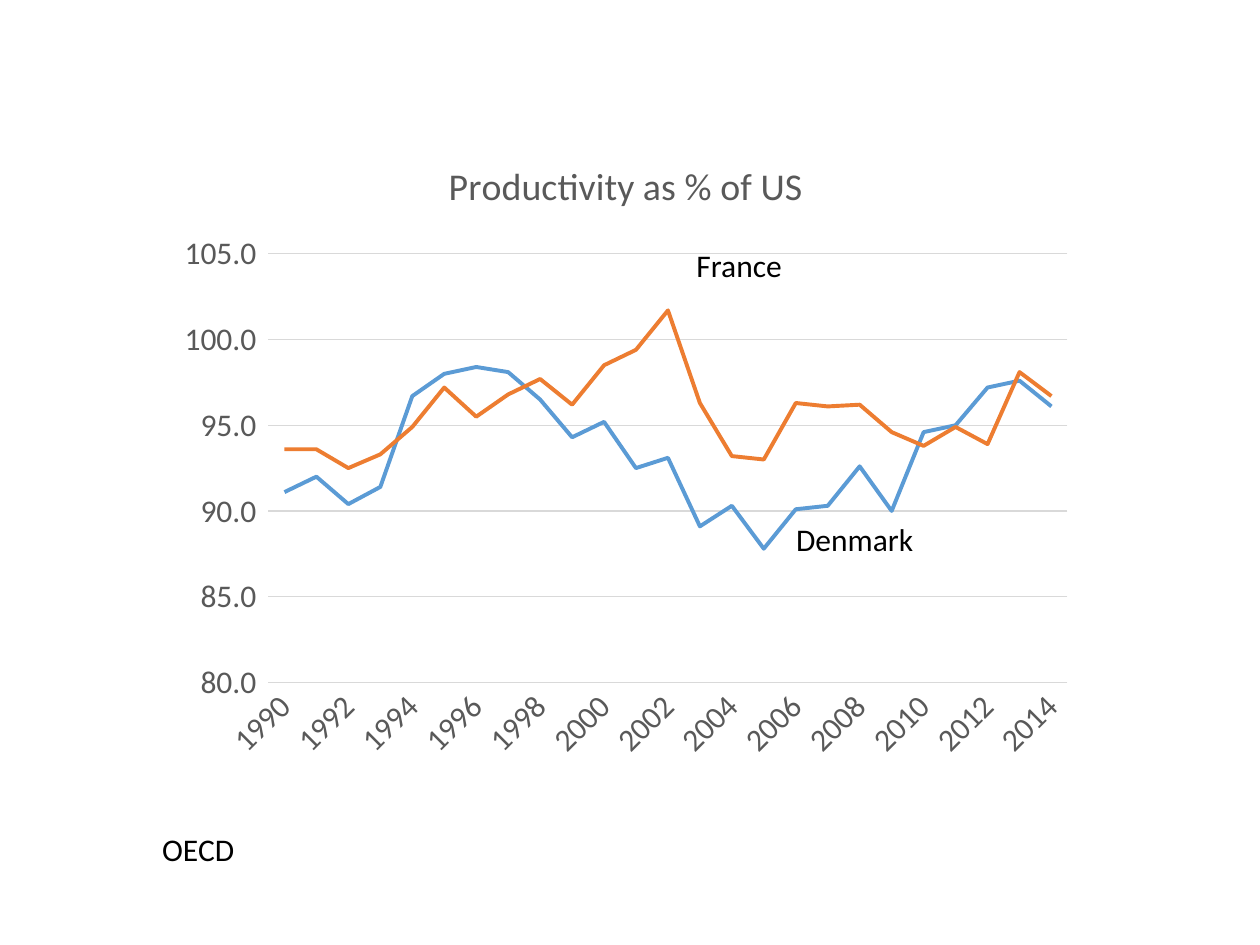
from dataclasses import dataclass

from lxml.etree import SubElement
from pptx import Presentation
from pptx.chart.data import CategoryChartData
from pptx.dml.color import RGBColor
from pptx.enum.chart import XL_CHART_TYPE, XL_TICK_MARK
from pptx.enum.text import MSO_AUTO_SIZE
from pptx.oxml.ns import qn
from pptx.util import Cm, Pt


@dataclass(frozen=True)
class Theme:
    font: str = "Calibri"
    text: RGBColor = RGBColor(0x00, 0x00, 0x00)
    muted: RGBColor = RGBColor(0x59, 0x59, 0x59)
    grid: RGBColor = RGBColor(0xD9, 0xD9, 0xD9)
    series: tuple = (RGBColor(0x5B, 0x9B, 0xD5), RGBColor(0xED, 0x7D, 0x31))
    body_size: Pt = Pt(18)
    title_size: Pt = Pt(21.6)
    grid_width: Pt = Pt(0.75)
    series_width: Pt = Pt(2.25)


YEARS = [str(year) for year in range(1990, 2015)]
PRODUCTIVITY = {
    "Denmark": (91.1, 92.0, 90.4, 91.4, 96.7, 98.0, 98.4, 98.1, 96.5, 94.3,
                95.2, 92.5, 93.1, 89.1, 90.3, 87.8, 90.1, 90.3, 92.6, 90.0,
                94.6, 95.0, 97.2, 97.6, 96.1),
    "France": (93.6, 93.6, 92.5, 93.3, 94.9, 97.2, 95.5, 96.8, 97.7, 96.2,
               98.5, 99.4, 101.7, 96.3, 93.2, 93.0, 96.3, 96.1, 96.2, 94.6,
               93.8, 94.9, 93.9, 98.1, 96.7),
}


class SlideBuilder:
    def __init__(self, page, theme):
        self.page = page
        self.theme = theme

    def style_font(self, font, color, size=None):
        font.name = self.theme.font
        font.size = size or self.theme.body_size
        font.bold = False
        font.color.rgb = color

    def style_line(self, line, color, width):
        line.color.rgb = color
        line.width = width

    def label(self, text, left, top, width, height=1.03):
        box = self.page.shapes.add_textbox(Cm(left), Cm(top), Cm(width), Cm(height))
        frame = box.text_frame
        frame.word_wrap = False
        frame.auto_size = MSO_AUTO_SIZE.SHAPE_TO_FIT_TEXT
        para = frame.paragraphs[0]
        para.text = text
        self.style_font(para.font, self.theme.text)

    def line_chart(self, title, categories, series, left, top, width, height):
        data = CategoryChartData(number_format="0.0")
        data.categories = categories
        for name, values in series.items():
            data.add_series(name, values)
        chart = self.page.shapes.add_chart(
            XL_CHART_TYPE.LINE, Cm(left), Cm(top), Cm(width), Cm(height), data
        ).chart
        chart.has_legend = False
        self.style_font(chart.font, self.theme.text)
        chart.has_title = True
        chart.chart_title.include_in_layout = False
        para = chart.chart_title.text_frame.paragraphs[0]
        para.text = title
        self.style_font(para.font, self.theme.muted, self.theme.title_size)
        for line, color in zip(chart.plots[0].series, self.theme.series):
            line.smooth = False
            self.style_line(line.format.line, color, self.theme.series_width)
        self.category_axis(chart.category_axis)
        self.value_axis(chart.value_axis)

    def axis(self, axis):
        axis.major_tick_mark = axis.minor_tick_mark = XL_TICK_MARK.NONE
        self.style_font(axis.tick_labels.font, self.theme.muted)

    def category_axis(self, axis):
        """Slant the labels and show every second year."""
        self.axis(axis)
        axis.has_major_gridlines = False
        self.style_line(axis.format.line, self.theme.grid, self.theme.grid_width)
        element = axis._element
        element.find(qn("c:txPr")).find(qn("a:bodyPr")).set("rot", "-2700000")
        skip = SubElement(element, qn("c:tickLblSkip"), val="2")
        element.find(qn("c:noMultiLvlLbl")).addprevious(skip)

    def value_axis(self, axis):
        self.axis(axis)
        axis.minimum_scale, axis.maximum_scale, axis.major_unit = 80, 105, 5
        axis.tick_labels.number_format = r"#,##0.0_ ;\-#,##0.0\ "
        axis.tick_labels.number_format_is_linked = False
        axis.format.line.fill.background()
        axis.has_major_gridlines = True
        self.style_line(axis.major_gridlines.format.line, self.theme.grid,
                        self.theme.grid_width)


def main():
    deck = Presentation()
    deck.slide_width, deck.slide_height = Cm(25.4), Cm(19.05)
    blank_layout = deck.slide_layouts[6]
    builder = SlideBuilder(deck.slides.add_slide(blank_layout), Theme())
    builder.line_chart("Productivity as % of US", YEARS, PRODUCTIVITY,
                       left=3.35, top=2.67, width=18.54, height=12.9)
    builder.label("France", 13.79, 4.83, 2.26)
    builder.label("Denmark", 15.8, 10.36, 2.9)
    builder.label("OECD", 3.02, 16.61, 1.98)
    deck.save("out.pptx")


if __name__ == "__main__":
    main()
